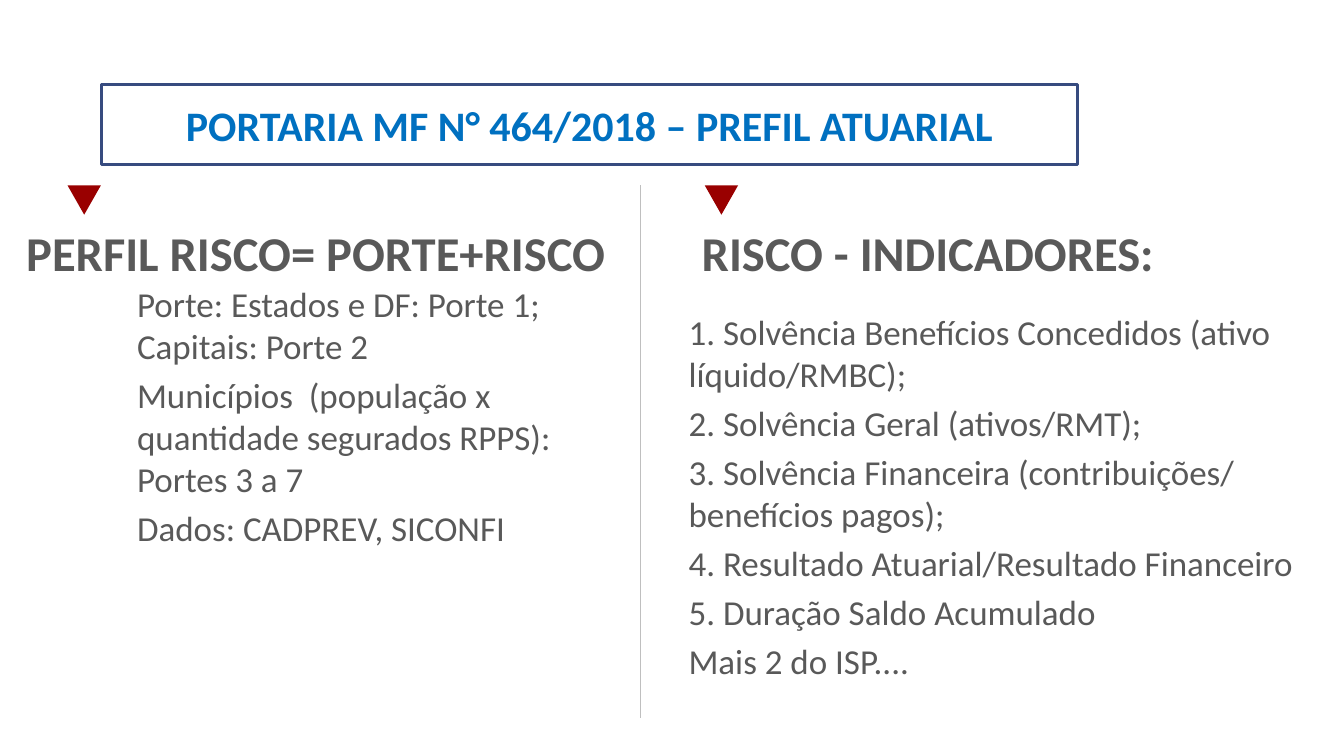
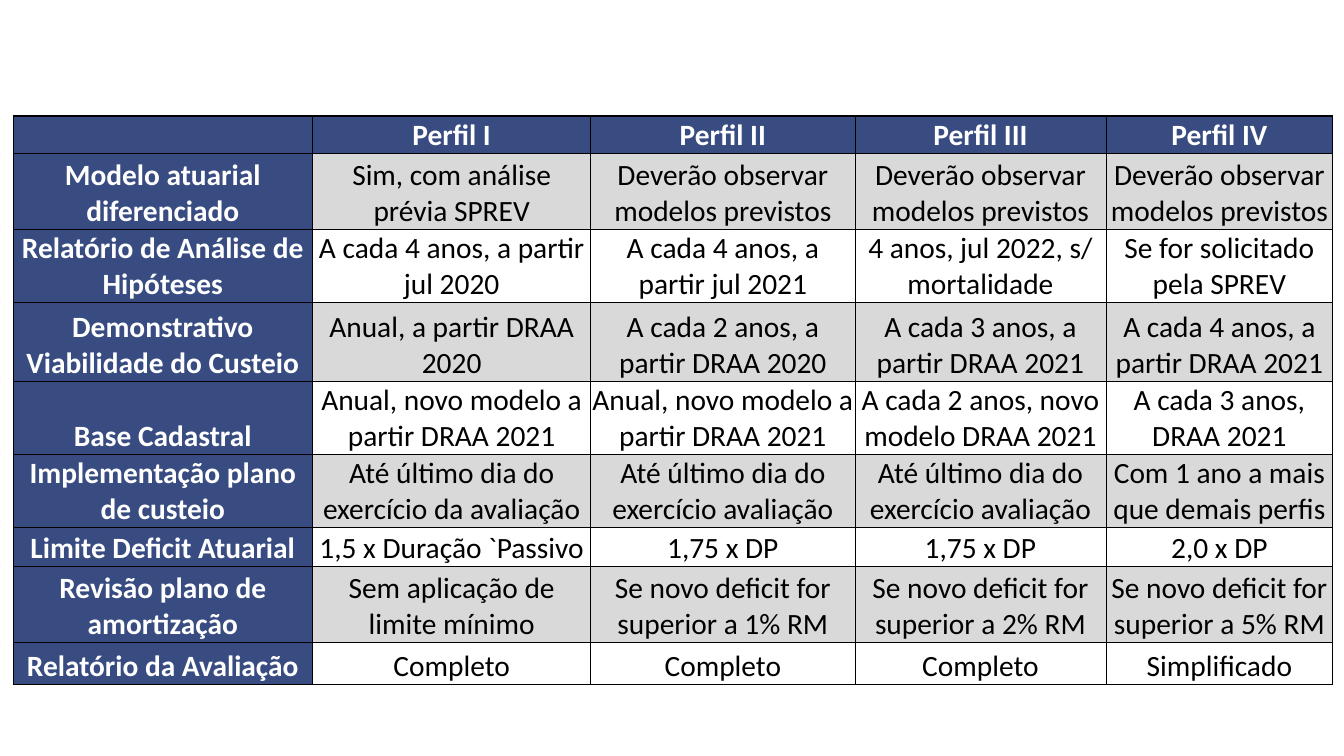
from dataclasses import dataclass

from lxml.etree import SubElement
from pptx import Presentation
from pptx.dml.color import RGBColor
from pptx.enum.shapes import MSO_CONNECTOR, MSO_SHAPE
from pptx.enum.text import MSO_ANCHOR, MSO_AUTO_SIZE, PP_ALIGN
from pptx.oxml.ns import qn
from pptx.slide import Slide
from pptx.table import _Cell
from pptx.text.text import TextFrame
from pptx.util import Inches, Pt

FONT = "Calibri"
COLORS = {
    "white": "FFFFFF",
    "black": "000000",
    "grey": "595959",
    "rule": "BFBFBF",
    "band": "D9D9D9",
    "red": "990000",
    "blue": "0070C0",
    "frame": "374B7F",
    "head": "384C81",
}


@dataclass
class Style:
    size: float
    color: str
    bold: bool = False
    align: PP_ALIGN = PP_ALIGN.LEFT
    anchor: MSO_ANCHOR = MSO_ANCHOR.TOP
    gap: float = 0


@dataclass
class Box:
    left: float
    top: float
    width: float
    height: float

    def emu(self) -> list[int]:
        return [Inches(n) for n in (self.left, self.top, self.width, self.height)]


@dataclass
class Panel:
    mark: float
    head: str
    head_box: Box
    items: list[str]
    list_box: Box


TITLE = Style(30, "blue", True, PP_ALIGN.CENTER, MSO_ANCHOR.MIDDLE)
HEAD = Style(34.7, "grey", True)
ITEM = Style(25, "grey", gap=5)
LABEL = Style(21, "white", True, PP_ALIGN.CENTER, MSO_ANCHOR.BOTTOM)
VALUE = Style(21, "black", False, PP_ALIGN.CENTER, MSO_ANCHOR.BOTTOM)

TOP = 1.84
PANELS = [
    Panel(
        0.67,
        "PERFIL RISCO= PORTE+RISCO",
        Box(0.13, 2.14, 6.14, 0.7),
        [
            "Porte: Estados e DF: Porte 1; Capitais: Porte 2",
            "Municípios  (população x quantidade segurados RPPS): Portes 3 a 7",
            "Dados: CADPREV, SICONFI",
        ],
        Box(1.23, 2.73, 5.12, 2.9),
    ),
    Panel(
        6.99,
        "RISCO - INDICADORES:",
        Box(6.83, 2.14, 5, 0.7),
        [
            "1. Solvência Benefícios Concedidos (ativo líquido/RMBC);",
            "2. Solvência Geral (ativos/RMT);",
            "3. Solvência Financeira (contribuições/ benefícios pagos);",
            "4. Resultado Atuarial/Resultado Financeiro",
            "5. Duração Saldo Acumulado",
            "Mais 2 do ISP....",
        ],
        Box(6.7, 3.01, 6.4, 4),
    ),
]

COLS = [2.97, 2.76, 2.62, 2.49, 2.25]
ROWS = [0.37, 0.76, 0.72, 0.78, 0.72, 0.72, 0.39, 0.75, 0.42]
DATA = [
    ["", "Perfil I", "Perfil II", "Perfil III", "Perfil IV"],
    ["Modelo atuarial diferenciado", "Sim, com análise prévia SPREV"]
    + ["Deverão observar modelos previstos"] * 3,
    [
        "Relatório de Análise de Hipóteses",
        "A cada 4 anos, a partir jul 2020",
        "A cada 4 anos, a partir jul 2021",
        "4 anos, jul 2022, s/ mortalidade",
        "Se for solicitado pela SPREV",
    ],
    [
        "Demonstrativo Viabilidade do Custeio",
        "Anual, a partir DRAA 2020",
        "A cada 2 anos, a partir DRAA 2020",
        "A cada 3 anos, a partir DRAA 2021",
        "A cada 4 anos, a partir DRAA 2021",
    ],
    [
        "Base Cadastral",
        "Anual, novo modelo a partir DRAA 2021",
        "Anual, novo modelo a partir DRAA 2021",
        "A cada 2 anos, novo modelo DRAA 2021",
        "A cada 3 anos, DRAA 2021",
    ],
    [
        "Implementação plano de custeio",
        "Até último dia do exercício da avaliação",
        "Até último dia do exercício avaliação",
        "Até último dia do exercício avaliação",
        "Com 1 ano a mais que demais perfis",
    ],
    [
        "Limite Deficit Atuarial",
        "1,5 x Duração `Passivo",
        "1,75 x DP",
        "1,75 x DP",
        "2,0 x DP",
    ],
    ["Revisão plano de amortização", "Sem aplicação de limite mínimo"]
    + [f"Se novo deficit for superior a {n}% RM" for n in (1, 2, 5)],
    ["Relatório da Avaliação", "Completo", "Completo", "Completo", "Simplificado"],
]


def rgb(name: str) -> RGBColor:
    return RGBColor.from_string(COLORS[name])


def write(frame: TextFrame, lines: list[str], style: Style) -> None:
    frame.word_wrap = True
    frame.vertical_anchor = style.anchor
    for i, line in enumerate(lines):
        para = frame.add_paragraph() if i else frame.paragraphs[0]
        props = para._p.get_or_add_pPr()
        props.set("marL", "0")
        props.set("indent", "0")
        SubElement(props, qn("a:buNone"))
        para.alignment = style.align
        para.space_before = Pt(style.gap if i else 0)
        run = para.add_run()
        run.text = line
        font = run.font
        font.name, font.size, font.bold = FONT, Pt(style.size), style.bold
        font.color.rgb = rgb(style.color)


def fill_holder(slide: Slide, idx: int, box: Box, lines: list[str], style: Style) -> None:
    """Place and fill the placeholder that has this index."""
    shape = slide.placeholders[idx]
    shape.left, shape.top, shape.width, shape.height = box.emu()
    frame = shape.text_frame
    frame.auto_size = MSO_AUTO_SIZE.NONE
    frame.margin_left = frame.margin_right = Inches(0.13)
    frame.margin_top = frame.margin_bottom = Inches(0.07)
    write(frame, lines, style)


def add_mark(slide: Slide, left: float) -> None:
    box = Box(left, TOP, 0.33, 0.29)
    mark = slide.shapes.add_shape(MSO_SHAPE.ISOSCELES_TRIANGLE, *box.emu())
    mark.rotation = 180
    mark.shadow.inherit = False
    mark.fill.solid()
    mark.fill.fore_color.rgb = rgb("red")
    mark.line.fill.background()


def add_rule(slide: Slide, x: float, top: float, end: float) -> None:
    ends = [Inches(n) for n in (x, top, x, end)]
    rule = slide.shapes.add_connector(MSO_CONNECTOR.STRAIGHT, *ends)
    rule.line.color.rgb = rgb("rule")
    rule.line.width = Pt(0.75)
    SubElement(rule._element.spPr, qn("a:effectLst"))


def add_edge(cell: _Cell, side: str, width: float) -> None:
    edge = SubElement(cell._tc.get_or_add_tcPr(), qn(f"a:ln{side}"), w=str(Pt(width)))
    fill = SubElement(edge, qn("a:solidFill"))
    SubElement(fill, qn("a:srgbClr"), val=COLORS["black"])


def fill_cell(cell: _Cell, text: str, row: int, col: int) -> None:
    outer = {"T": row == 0, "B": row == len(ROWS) - 1}
    for side in "LRTB":
        add_edge(cell, side, 1 if outer.get(side) else 0.5)
    label = row == 0 or col == 0
    cell.fill.solid()
    cell.fill.fore_color.rgb = rgb("head" if label else "band" if row % 2 else "white")
    cell.margin_left = cell.margin_right = cell.margin_top = Inches(0.01)
    cell.margin_bottom = 0
    style = LABEL if label else VALUE
    cell.vertical_anchor = style.anchor
    if text:
        write(cell.text_frame, [text], style)


def draw_risk(deck: Presentation) -> None:
    slide = deck.slides.add_slide(deck.slide_layouts.get_by_name("Comparison"))
    for i, panel in enumerate(PANELS):
        add_mark(slide, panel.mark)
        fill_holder(slide, 2 * i + 1, panel.head_box, [panel.head], HEAD)
        fill_holder(slide, 2 * i + 2, panel.list_box, panel.items, ITEM)
    add_rule(slide, 6.35, TOP, 7.12)
    title = slide.shapes.title
    box = Box(1.01, 0.84, 9.68, 0.79)
    fill_holder(slide, 0, box, ["PORTARIA MF N° 464/2018 – PREFIL ATUARIAL"], TITLE)
    title.fill.solid()
    title.fill.fore_color.rgb = rgb("white")
    title.line.color.rgb = rgb("frame")
    title.line.width = Pt(2)


def draw_table(deck: Presentation) -> None:
    slide = deck.slides.add_slide(deck.slide_layouts.get_by_name("Blank"))
    box = Box(0.13, 1.15, sum(COLS), sum(ROWS))
    table = slide.shapes.add_table(len(ROWS), len(COLS), *box.emu()).table
    table.first_row = table.horz_banding = False
    for col, width in zip(table.columns, COLS):
        col.width = Inches(width)
    for r, (row, height) in enumerate(zip(table.rows, ROWS)):
        row.height = Inches(height)
        for c, text in enumerate(DATA[r]):
            fill_cell(table.cell(r, c), text, r, c)


def main() -> None:
    deck = Presentation()
    deck.slide_width, deck.slide_height = Inches(13.33), Inches(7.5)
    draw_risk(deck)
    draw_table(deck)
    deck.save("out.pptx")


if __name__ == "__main__":
    main()
